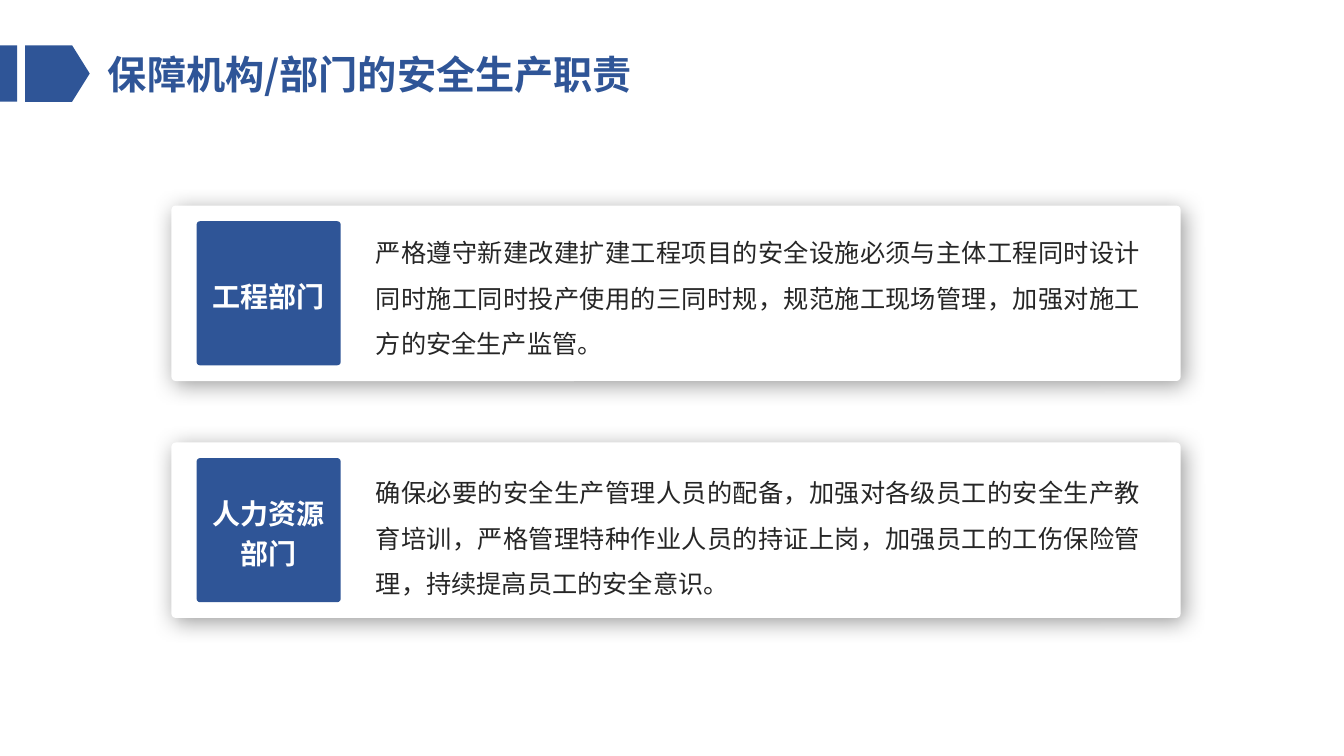
"""Build the slide on the safety duties of supporting departments."""
from dataclasses import dataclass

from lxml import etree
from pptx import Presentation
from pptx.dml.color import RGBColor
from pptx.enum.shapes import MSO_SHAPE
from pptx.enum.text import MSO_ANCHOR, PP_ALIGN
from pptx.oxml.ns import qn
from pptx.util import Inches, Pt

RECT, ROUND, PENTAGON = MSO_SHAPE.RECTANGLE, MSO_SHAPE.ROUNDED_RECTANGLE, MSO_SHAPE.PENTAGON
LEFT, CENTER, JUSTIFY = PP_ALIGN.LEFT, PP_ALIGN.CENTER, PP_ALIGN.JUSTIFY
TOP, MIDDLE = MSO_ANCHOR.TOP, MSO_ANCHOR.MIDDLE

TITLE = "保障机构/部门的安全生产职责"
DEPARTMENTS = [
    {"name": "工程部门", "duty_offset": 0.12,
     "duty": "严格遵守新建改建扩建工程项目的安全设施必须与主体工程同时设计"
             "同时施工同时投产使用的三同时规，规范施工现场管理，加强对施工方的安全生产监管。"},
    {"name": "人力资源部门", "duty_offset": 0.15,
     "duty": "确保必要的安全生产管理人员的配备，加强对各级员工的安全生产教育培训，"
             "严格管理特种作业人员的持证上岗，加强员工的工伤保险管理，持续提高员工的安全意识。"},
]

SLIDE_W, SLIDE_H = 13.33, 7.5
BANNER_TOP, BANNER_H = 0.45, 0.56
CARD_X, CARD_Y, CARD_W, CARD_H, CARD_STEP = 1.7, 2.04, 10.01, 1.74, 2.35
LABEL_X, LABEL_SIDE = 1.95, 1.43
DUTY_X, DUTY_W, DUTY_H = 3.63, 7.78, 1.42
CORNER = 0.024


@dataclass(frozen=True)
class Theme:
    """Colours, font and type sizes."""
    blue: str = "2F5597"
    white: str = "FFFFFF"
    ink: str = "262626"
    shadow: str = "000000"
    font: str = "Noto Sans CJK SC"
    title: int = 28
    label: int = 20
    body: int = 18


THEME = Theme()


def add_block(slide, kind, box, color, corner=None):
    """Add a filled shape without outline or shadow."""
    s = slide.shapes.add_shape(kind, *map(Inches, box))
    s.shadow.inherit = False
    s.fill.solid()
    s.fill.fore_color.rgb = RGBColor.from_string(color)
    s.line.fill.background()
    if corner is not None:
        s.adjustments[0] = corner
    return s


def add_soft_shadow(s):
    """Give a shape a blurred shadow towards the lower right."""
    effects = s._element.spPr.find(qn("a:effectLst"))
    shadow = etree.SubElement(effects, qn("a:outerShdw"), blurRad=str(Pt(16)), dist=str(Pt(3)),
                              dir=str(45 * 60000), algn="tl", rotWithShape="0")
    color = etree.SubElement(shadow, qn("a:srgbClr"), val=THEME.shadow)
    etree.SubElement(color, qn("a:alpha"), val="40000")


def write(s, text, size, color, align, anchor, spacing=1.0, bold=False):
    """Write one formatted paragraph into a shape."""
    tf = s.text_frame
    tf.word_wrap = True
    tf.vertical_anchor = anchor
    p = tf.paragraphs[0]
    p.alignment, p.line_spacing = align, spacing
    r = p.add_run()
    r.text = text
    r.font.name, r.font.size, r.font.bold = THEME.font, Pt(size), bold
    r.font.color.rgb = RGBColor.from_string(color)
    etree.SubElement(r.font._element, qn("a:ea"), typeface=THEME.font)


def add_header(slide):
    """Add the banner marks and the title."""
    add_block(slide, RECT, (0, BANNER_TOP, 0.17, BANNER_H), THEME.blue)
    add_block(slide, PENTAGON, (0.25, BANNER_TOP, 0.64, BANNER_H), THEME.blue, 0.312)
    s = slide.shapes.title
    s.left, s.top, s.width, s.height = map(Inches, (0.97, BANNER_TOP, 6.34, 0.57))
    write(s, TITLE, THEME.title, THEME.blue, LEFT, MIDDLE, bold=True)


def add_card(slide, row, department):
    """Add one department card with its label and duty."""
    top = CARD_Y + row * CARD_STEP
    card = add_block(slide, ROUND, (CARD_X, top, CARD_W, CARD_H), THEME.white, CORNER)
    add_soft_shadow(card)
    label_top = top + (CARD_H - LABEL_SIDE) / 2
    label = add_block(slide, ROUND, (LABEL_X, label_top, LABEL_SIDE, LABEL_SIDE), THEME.blue, CORNER)
    write(label, department["name"], THEME.label, THEME.white, CENTER, MIDDLE, 1.2, True)
    duty_box = (DUTY_X, top + department["duty_offset"], DUTY_W, DUTY_H)
    duty = slide.shapes.add_textbox(*map(Inches, duty_box))
    write(duty, department["duty"], THEME.body, THEME.ink, JUSTIFY, TOP, 1.5)


def main():
    """Create and save the slide."""
    prs = Presentation()
    prs.slide_width, prs.slide_height = Inches(SLIDE_W), Inches(SLIDE_H)
    slide = prs.slides.add_slide(prs.slide_layouts.get_by_name("Title Only"))
    add_header(slide)
    for row, department in enumerate(DEPARTMENTS):
        add_card(slide, row, department)
    prs.save("out.pptx")


if __name__ == "__main__":
    main()
